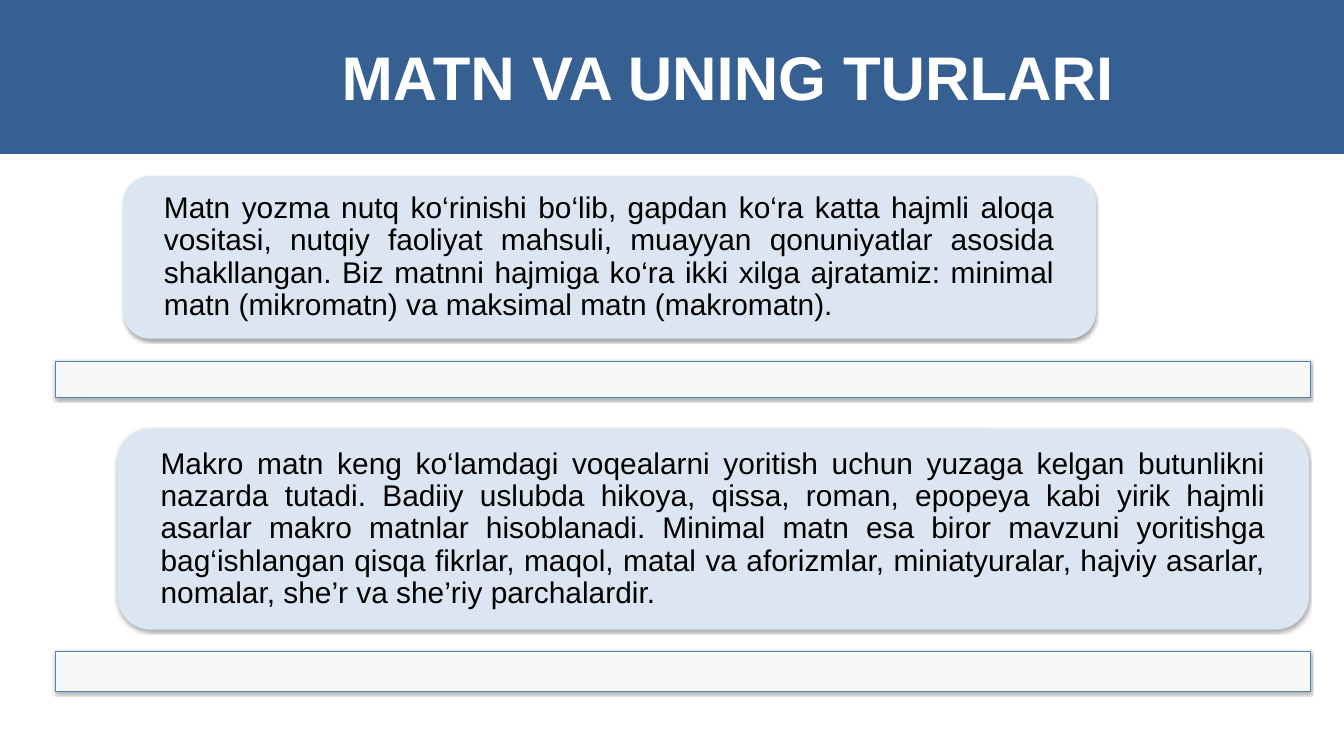
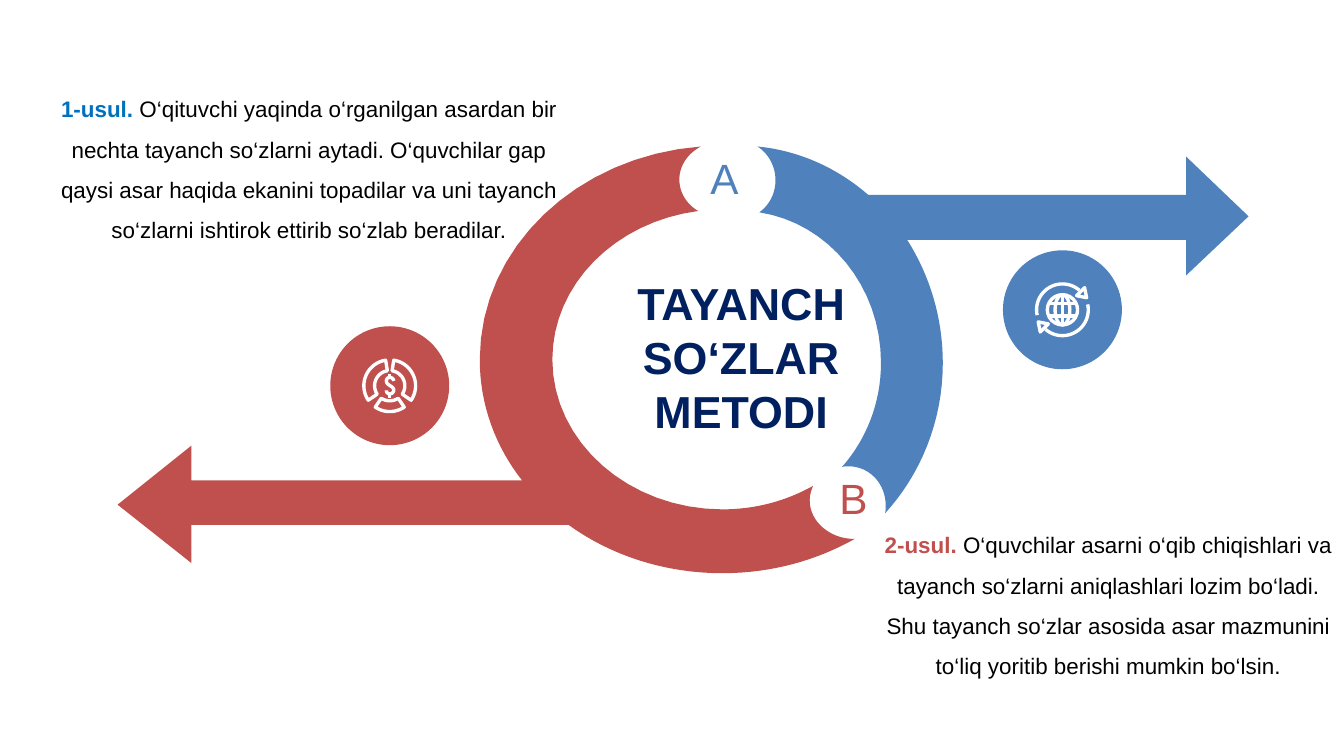
"""Build two slides on text types and the key-word method."""
import math

from lxml import etree
from pptx import Presentation
from pptx import util as u
from pptx.dml.color import RGBColor
from pptx.enum import shapes, text
from pptx.oxml.ns import qn

BAND = RGBColor(0x37, 0x60, 0x92)
PALE = RGBColor(0xDC, 0xE6, 0xF2)
BLUE = RGBColor(0x4F, 0x81, 0xBD)
RED = RGBColor(0xC0, 0x50, 0x4D)
NAVY = RGBColor(0x00, 0x20, 0x60)
SKY = RGBColor(0x00, 0x70, 0xC0)
WHITE = RGBColor(0xFF, 0xFF, 0xFF)
BLACK = RGBColor(0x00, 0x00, 0x00)

FONT = "Arial"
MIDDLE = text.MSO_ANCHOR.MIDDLE
CENTER = text.PP_ALIGN.CENTER
JUSTIFY = text.PP_ALIGN.JUSTIFY
KIND = shapes.MSO_SHAPE
ICON_STROKE = 3.6

# Each path is a start point followed by lines (2 numbers) and curves (6).
BLUE_ARROW = [
    (18.58, 3.22), (17.65, 2.33), (17.65, 2.9), (12.92, 2.9),
    (12.46, 2.5, 11.89, 2.24, 11.27, 2.18),
    (11.43, 2.28, 11.54, 2.47, 11.54, 2.68),
    (11.54, 2.88, 11.45, 3.05, 11.3, 3.16),
    (12.33, 3.32, 13.11, 4.26, 13.11, 5.4),
    (13.11, 6, 12.89, 6.54, 12.53, 6.95),
    (12.56, 6.94, 12.6, 6.94, 12.63, 6.94),
    (12.94, 6.94, 13.18, 7.2, 13.18, 7.52),
    (13.18, 7.56, 13.18, 7.6, 13.17, 7.64),
    (13.7, 7.06, 14.03, 6.27, 14.03, 5.4),
    (14.03, 4.72, 13.83, 4.09, 13.5, 3.57),
    (17.65, 3.57), (17.65, 4.1),
]
RED_ARROW = [
    (12.71, 8.02),
    (12.35, 8.02, 12.05, 7.76, 12.05, 7.45),
    (12.05, 7.37, 12.07, 7.3, 12.1, 7.23),
    (11.71, 7.45, 11.25, 7.58, 10.75, 7.58),
    (9.36, 7.58, 8.22, 6.58, 8.22, 5.35),
    (8.22, 4.23, 9.16, 3.3, 10.39, 3.14),
    (10.22, 3.04, 10.11, 2.87, 10.11, 2.67),
    (10.11, 2.46, 10.24, 2.28, 10.43, 2.18),
    (8.59, 2.32, 7.14, 3.68, 7.14, 5.35),
    (7.14, 6.02, 7.37, 6.64, 7.77, 7.15),
    (2.85, 7.15), (2.85, 6.63), (1.75, 7.51), (2.85, 8.38),
    (2.85, 7.81), (8.46, 7.81),
    (9.08, 8.26, 9.88, 8.53, 10.75, 8.53),
    (11.48, 8.53, 12.15, 8.34, 12.72, 8.02),
]
DOLLAR = [
    (5.86, 5.67),
    (5.85, 5.6, 5.75, 5.6, 5.75, 5.67),
    (5.75, 5.74, 5.86, 5.74, 5.86, 5.81),
    (5.85, 5.88, 5.75, 5.88, 5.75, 5.81),
]

DEFINITION = (
    "Matn yozma nutq ko‘rinishi bo‘lib, gapdan ko‘ra katta hajmli aloqa "
    "vositasi, nutqiy faoliyat mahsuli, muayyan qonuniyatlar asosida "
    "shakllangan. Biz matnni hajmiga ko‘ra ikki xilga ajratamiz: minimal "
    "matn (mikromatn) va maksimal matn (makromatn).")
TEXT_KINDS = (
    "Makro matn keng ko‘lamdagi voqealarni yoritish uchun yuzaga kelgan "
    "butunlikni nazarda tutadi. Badiiy uslubda hikoya, qissa, roman, epopeya "
    "kabi yirik hajmli asarlar makro matnlar hisoblanadi. Minimal matn esa "
    "biror mavzuni yoritishga bag‘ishlangan qisqa fikrlar, maqol, matal va "
    "aforizmlar, miniatyuralar, hajviy asarlar, nomalar, she’r va she’riy "
    "parchalardir.")
METHOD_1 = (
    " O‘qituvchi yaqinda o‘rganilgan asardan bir nechta tayanch so‘zlarni "
    "aytadi. O‘quvchilar gap qaysi asar haqida ekanini topadilar va uni "
    "tayanch so‘zlarni ishtirok ettirib so‘zlab beradilar.")
METHOD_2 = (
    " O‘quvchilar asarni o‘qib chiqishlari va tayanch so‘zlarni aniqlashlari "
    "lozim bo‘ladi. Shu tayanch so‘zlar asosida asar mazmunini to‘liq yoritib "
    "berishi mumkin bo‘lsin.")


def set_attrs(obj, values):
    """Set each named value on an object."""
    for name, value in values.items():
        setattr(obj, name, value)


def paint(sp, fill=None, line=None, width=0.75):
    """Give a shape its fill and line, without a shadow."""
    sp.shadow.inherit = False
    if fill is None:
        sp.fill.background()
    else:
        sp.fill.solid()
        sp.fill.fore_color.rgb = fill
    if line is None:
        sp.line.fill.background()
    else:
        sp.line.color.rgb = line
        sp.line.width = u.Pt(width)
    return sp


def add_shape(s, kind, box, **look):
    """Add a painted preset shape."""
    return paint(s.shapes.add_shape(kind, *map(u.Inches, box)), **look)


def add_alpha(color, percent):
    """Set the opacity of a colour element."""
    etree.SubElement(color, qn("a:alpha"), val=str(percent * 1000))


def cast_shadow(sp):
    """Add a soft shadow straight below a shape."""
    effects = sp._element.spPr.find(qn("a:effectLst"))
    shadow = etree.SubElement(
        effects, qn("a:outerShdw"), blurRad="40000", dist="23000",
        dir="5400000", rotWithShape="0")
    add_alpha(etree.SubElement(shadow, qn("a:srgbClr"), val="000000"), 35)


def add_text(s, box, runs, size, align=CENTER, spacing=None, inset=(0.1, 0.05),
             **frame):
    """Add a text box of one paragraph from (text, colour, bold) runs."""
    tf = s.shapes.add_textbox(*map(u.Inches, box)).text_frame
    side, top = map(u.Inches, inset)
    set_attrs(tf, {"word_wrap": True, "margin_left": side, "margin_right": side,
                   "margin_top": top, "margin_bottom": top, **frame})
    p = tf.paragraphs[0]
    set_attrs(p, {"alignment": align, "line_spacing": spacing})
    for words, color, bold in runs:
        r = p.add_run()
        r.text = words
        set_attrs(r.font, {"name": FONT, "size": u.Pt(size), "bold": bold})
        r.font.color.rgb = color


def flatten(path, steps=16):
    """Turn a path of lines and cubic curves into points."""
    points = [path[0]]
    for segment in path[1:]:
        if len(segment) == 2:
            points.append(segment)
            continue
        curve = points[-1] + segment
        for i in range(1, steps + 1):
            t = i / steps
            weights = ((1 - t) ** 3, 3 * t * (1 - t) ** 2,
                       3 * t ** 2 * (1 - t), t ** 3)
            points.append(tuple(
                sum(w * c for w, c in zip(weights, curve[axis::2]))
                for axis in (0, 1)))
    return points


def add_outline(s, points, closed=True, **look):
    """Add a painted freeform through points."""
    first, *rest = [tuple(map(u.Inches, point)) for point in points]
    builder = s.shapes.build_freeform(*first)
    builder.add_line_segments(rest, close=closed)
    return paint(builder.convert_to_shape(), **look)


def arc(center, radius, start, end, steps=24):
    """Return points on a circle between two angles in degrees."""
    angles = [math.radians(start + (end - start) * i / steps)
              for i in range(steps + 1)]
    return [(center[0] + radius * math.cos(a), center[1] + radius * math.sin(a))
            for a in angles]


def add_line(s, start, end):
    """Add a white icon line."""
    c = s.shapes.add_connector(shapes.MSO_CONNECTOR.STRAIGHT,
                               *map(u.Inches, start + end))
    c.line.color.rgb = WHITE
    c.line.width = u.Pt(ICON_STROKE)
    etree.SubElement(c._element.spPr, qn("a:effectLst"))


def add_oval(s, center, rx, ry, **look):
    """Add an ellipse around a centre."""
    x, y = center
    add_shape(s, KIND.OVAL, (x - rx, y - ry, 2 * rx, 2 * ry), **look)


def add_money_icon(s, center):
    """Draw a ring of three sectors around a dollar sign."""
    stroke = {"line": WHITE, "width": ICON_STROKE}
    add_oval(s, center, 0.885, 0.885, fill=RED)
    for start, end in ((146, 261), (56, 124), (279, 394)):
        sector = arc(center, 0.385, start, end) + arc(center, 0.225, end, start)
        add_outline(s, sector, **stroke)
    add_outline(s, flatten(DOLLAR), closed=False, **stroke)
    x, y = center
    for top in (y - 0.18, y + 0.12):
        add_line(s, (x, top), (x, top + 0.06))


def add_globe_icon(s, center):
    """Draw a globe inside two turning arrows."""
    stroke = {"line": WHITE, "width": ICON_STROKE}
    x, y = center
    add_oval(s, center, 0.885, 0.885, fill=BLUE)
    for turn, sign in ((0, 1), (180, -1)):
        add_outline(s, arc(center, 0.385, 168 + turn, 311 + turn),
                    closed=False, **stroke)
        head = [(x + sign * dx, y + sign * dy)
                for dx, dy in ((0.21, -0.21), (0.33, -0.33), (0.36, -0.18))]
        add_outline(s, head, **stroke)
    add_oval(s, center, 0.225, 0.225, **stroke)
    add_oval(s, center, 0.11, 0.225, **stroke)
    add_line(s, (x, y - 0.225), (x, y + 0.225))
    for dy in (-0.09, 0.09):
        add_line(s, (x - 0.2, y + dy), (x + 0.2, y + dy))


def add_bar(s, top, height):
    """Add a thin outlined bar with a shadow."""
    sp = add_shape(s, KIND.RECTANGLE, (0.83, top, 18.67, height),
                   fill=WHITE, line=BLUE)
    add_alpha(sp._element.spPr.find(qn("a:solidFill"))[0], 90)
    cast_shadow(sp)


def add_card(s, box, words, pad):
    """Add a rounded card with justified text."""
    cast_shadow(add_shape(s, KIND.ROUNDED_RECTANGLE, box, fill=PALE))
    left, top, width, height = box
    inner = (left + pad, top + pad, width - 2 * pad, height - 2 * pad)
    add_text(s, inner, [(words, BLACK, False)], 32, JUSTIFY, 0.9, (0.49, 0),
             vertical_anchor=MIDDLE)


def build_text_types(s):
    """Build the slide on text and its types."""
    add_shape(s, KIND.RECTANGLE, (0, 0, 20, 2.29), fill=BAND)
    add_text(s, (4.08, 0.62, 13.5, 1.34),
             [("MATN VA UNING TURLARI", WHITE, True)], 66, spacing=u.Pt(55.5),
             inset=(0, 0), vertical_anchor=MIDDLE, word_wrap=False)
    add_bar(s, 9.69, 0.6)
    add_card(s, (1.83, 2.62, 14.48, 2.42), DEFINITION, 0.12)
    add_bar(s, 5.38, 0.53)
    add_card(s, (1.75, 6.38, 17.73, 2.99), TEXT_KINDS, 0.15)


def build_key_words(s):
    """Build the slide on the key-word method."""
    for path, color in ((BLUE_ARROW, BLUE), (RED_ARROW, RED)):
        add_outline(s, flatten(path), fill=color)
    for letter, color, box in (("A", BLUE, (10.5, 2.28, 0.54, 0.72)),
                               ("B", RED, (12.42, 7.05, 0.49, 0.72))):
        add_text(s, box, [(letter, color, False)], 45.3, inset=(0.07, 0.04),
                 vertical_anchor=MIDDLE)
    add_money_icon(s, (5.8, 5.74))
    add_globe_icon(s, (15.81, 4.61))
    add_text(s, (8.95, 4.18, 4.16, 2.26),
             [("TAYANCH SO‘ZLAR METODI", NAVY, True)], 48, inset=(0.18, 0.09),
             vertical_anchor=MIDDLE)
    for label, color, words, box in (
            ("1-usul.", SKY, METHOD_1, (0.8, 1.17, 7.59, 2.45)),
            ("2-usul.", RED, METHOD_2, (12.95, 7.66, 7.08, 2.45))):
        add_text(s, box, [(label, color, True), (words, BLACK, False)], 24,
                 spacing=1.5, auto_size=text.MSO_AUTO_SIZE.SHAPE_TO_FIT_TEXT)


def main():
    """Build and save the presentation."""
    prs = Presentation()
    set_attrs(prs, {"slide_width": u.Inches(20), "slide_height": u.Inches(11.25)})
    for build in (build_text_types, build_key_words):
        build(prs.slides.add_slide(prs.slide_layouts[6]))
    prs.save("out.pptx")


if __name__ == "__main__":
    main()
